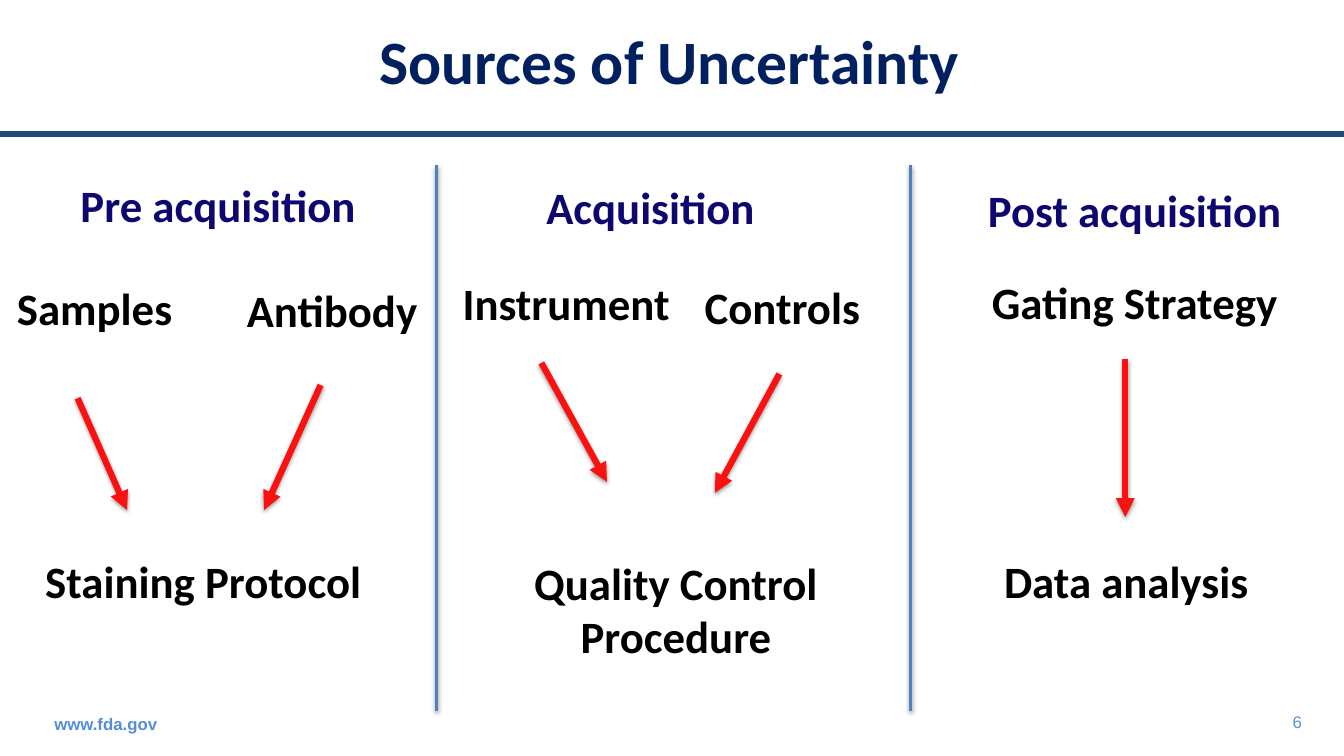
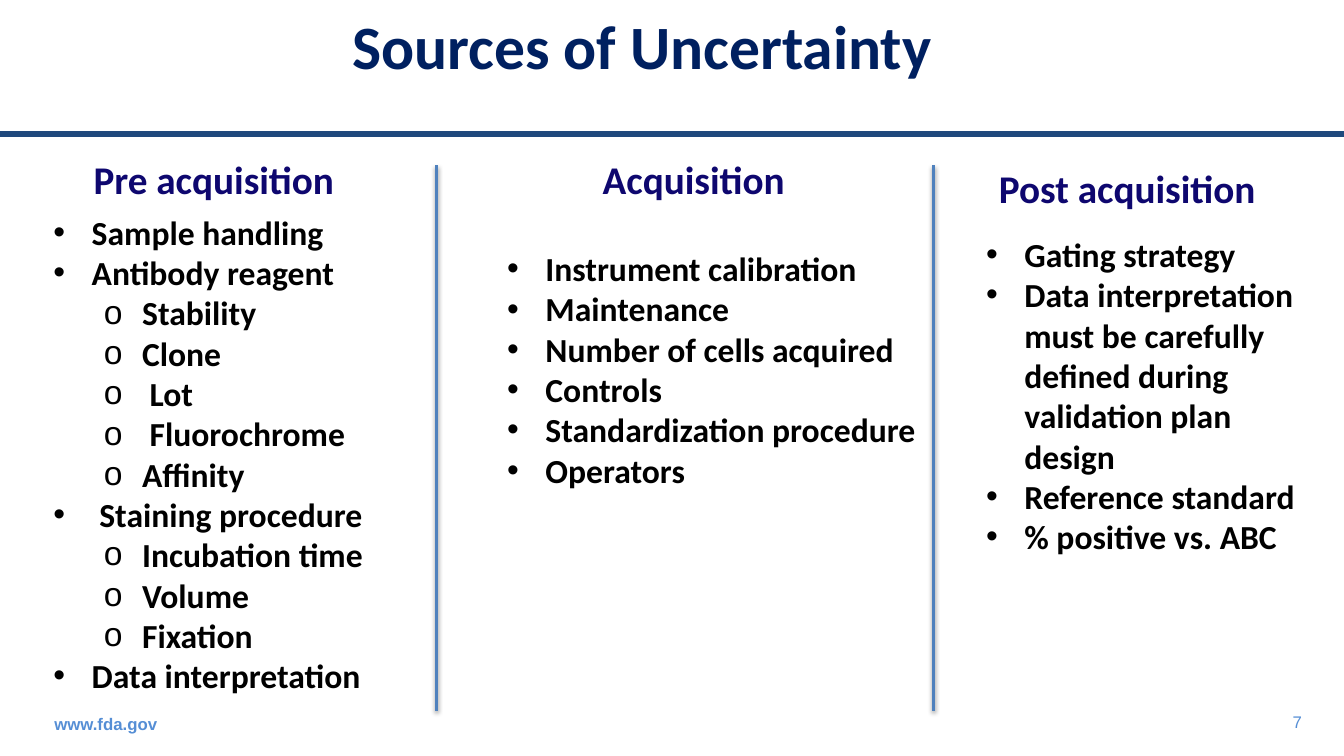
"""Two slides on the sources of uncertainty before, during and after acquisition."""
from lxml.etree import SubElement as Sub
from pptx import Presentation
from pptx.dml.color import RGBColor
from pptx.enum.shapes import MSO_CONNECTOR as Conn
from pptx.enum.text import MSO_ANCHOR as Anchor, MSO_AUTO_SIZE as Auto, PP_ALIGN as Align
from pptx.oxml.ns import qn
from pptx.util import Pt

PX = 9144
WIDTH, HEIGHT = 1333, 750
NAVY = RGBColor(0x00, 0x20, 0x60)
INDIGO = RGBColor(0x0E, 0x07, 0x6F)
BLACK = RGBColor(0x00, 0x00, 0x00)
RED = RGBColor(0xFC, 0x10, 0x10)
BAND = RGBColor(0x1F, 0x49, 0x7D)
DIVIDER = RGBColor(0x4F, 0x81, 0xBD)
FOOTER = RGBColor(0x55, 0x8E, 0xD5)

TITLE = "Sources of Uncertainty "
SITE = "www.fda.gov"
TITLE_ONLY, COMPARISON = 5, 4
DIVIDER_TOP, DIVIDER_END = 164, 705
INDENT, LEVEL_STEP = 38, 50
BULLETS = ("•", "o")

FLOW_HEADS = [
    ("Pre acquisition", 70, 171, 357),
    ("Acquisition", 532, 173, 269),
    ("Post acquisition", 970, 176, 357),
]
FLOW_STEPS = [
    ("Samples", 7, 274, 335),
    ("Antibody", 235, 276, 240),
    ("Staining Protocol", 35, 544, 338),
    ("Instrument", 449, 269, 324),
    ("Controls", 689, 273, 324),
    ("Gating Strategy", 974, 268, 354),
    ("Data analysis", 986, 544, 296),
]
QUALITY = ["Quality Control", "Procedure"]
ARROWS = [
    (77, 395, 126, 506),
    (318, 382, 262, 506),
    (537, 360, 602, 478),
    (773, 371, 709, 489),
    (1116, 356, 1116, 513),
]

LIST_HEADS = [
    ("Pre acquisition", 83, 149, 300),
    ("Acquisition", 588, 149, 226),
    ("Post acquisition", 981, 158, 300),
]
LISTS = [
    ((43, 205, 399, 500), [
        (0, "Sample handling"),
        (0, "Antibody reagent"),
        (1, "Stability"),
        (1, "Clone"),
        (1, " Lot"),
        (1, " Fluorochrome"),
        (1, "Affinity"),
        (0, " Staining procedure"),
        (1, "Incubation time"),
        (1, "Volume"),
        (1, "Fixation"),
        (0, "Data interpretation"),
    ]),
    ((493, 241, 442, 414), [
        (0, "Instrument calibration"),
        (0, "Maintenance"),
        (0, "Number of cells acquired"),
        (0, "Controls"),
        (0, "Standardization procedure"),
        (0, "Operators"),
    ]),
    ((968, 227, 339, 374), [
        (0, "Gating strategy"),
        (0, "Data interpretation must be carefully defined during validation plan design"),
        (0, "Reference standard"),
        (0, "% positive vs. ABC"),
    ]),
]


def place(sp, box):
    sp.left, sp.top, sp.width, sp.height = (v * PX for v in box)


def add_run(p, text, size, color, bold=True, font="Calibri"):
    r = p.add_run()
    r.text = text
    r.font.name, r.font.size, r.font.bold = font, Pt(size), bold
    r.font.color.rgb = color


def add_text(s, box, lines, size, color, align=Align.LEFT, anchor=Anchor.TOP, **style):
    tf = s.shapes.add_textbox(*(v * PX for v in box)).text_frame
    tf.word_wrap, tf.vertical_anchor = True, anchor
    for i, line in enumerate(lines):
        p = tf.add_paragraph() if i else tf.paragraphs[0]
        p.alignment = align
        add_run(p, line, size, color, **style)


def add_labels(s, labels, size, color):
    for text, x, y, w in labels:
        add_text(s, (x, y, w, size * 2), [text], size, color)


def add_line(s, ends, color, width, shadow=True, arrow=False):
    c = s.shapes.add_connector(Conn.STRAIGHT, *(v * PX for v in ends))
    c.line.color.rgb, c.line.width = color, Pt(width)
    if arrow:
        Sub(c.line._ln, qn("a:tailEnd"), type="triangle")
    effects = Sub(c._element.spPr, qn("a:effectLst"))
    if shadow:
        outer = Sub(effects, qn("a:outerShdw"), blurRad=str(Pt(3.1)), dist=str(Pt(1.6)),
                    dir="5400000", rotWithShape="0")
        Sub(Sub(outer, qn("a:srgbClr"), val="000000"), qn("a:alpha"), val="38000")


def add_dividers(s, *columns):
    for x in columns:
        add_line(s, (x, DIVIDER_TOP, x, DIVIDER_END), DIVIDER, 2)


def fill_list(sp, box, items):
    place(sp, box)
    tf = sp.text_frame
    tf.word_wrap, tf.auto_size, tf.vertical_anchor = True, Auto.NONE, Anchor.TOP
    for i, (level, text) in enumerate(items):
        p = tf.add_paragraph() if i else tf.paragraphs[0]
        p.level, p.alignment, p.space_before = level, Align.LEFT, Pt(0)
        pPr = p._p.get_or_add_pPr()
        pPr.set("marL", str((INDENT + level * LEVEL_STEP) * PX))
        pPr.set("indent", str(-INDENT * PX))
        Sub(pPr, qn("a:buFont"), typeface="Arial")
        Sub(pPr, qn("a:buChar"), char=BULLETS[level])
        add_run(p, text, 24, BLACK)


def add_slide(prs, layout, number, title_x, title_y):
    s = prs.slides.add_slide(prs.slide_layouts[layout])
    title = s.shapes.title
    place(title, (title_x, title_y, 1200, 125))
    tf = title.text_frame
    tf.word_wrap, tf.auto_size, tf.vertical_anchor = True, Auto.NONE, Anchor.MIDDLE
    p = tf.paragraphs[0]
    p.alignment = Align.CENTER
    add_run(p, TITLE, 44, NAVY)
    add_line(s, (0, 133, WIDTH, 133), BAND, 4.5, shadow=False)
    add_text(s, (44, 698, 422, 40), [SITE], 12, FOOTER, anchor=Anchor.MIDDLE, font="Arial")
    add_text(s, (1260, 701, 41, 30), [str(number)], 12, FOOTER, Align.RIGHT,
             bold=False, font="Arial")
    return s


def build_flow(prs):
    s = add_slide(prs, TITLE_ONLY, 6, 71, -3)
    add_labels(s, FLOW_HEADS, 32, INDIGO)
    add_labels(s, FLOW_STEPS, 32, BLACK)
    add_text(s, (507, 546, 327, 118), QUALITY, 32, BLACK, Align.CENTER)
    add_dividers(s, 433, 903)
    for ends in ARROWS:
        add_line(s, ends, RED, 4.5, arrow=True)


def build_lists(prs):
    s = add_slide(prs, COMPARISON, 7, 44, -18)
    add_labels(s, LIST_HEADS, 28, INDIGO)
    add_dividers(s, 433, 926)
    bodies = list(s.placeholders)[1:]
    for sp, (box, items) in zip(bodies, LISTS):
        fill_list(sp, box, items)
    for sp in bodies[len(LISTS):]:
        sp._element.getparent().remove(sp._element)


def main():
    prs = Presentation()
    prs.slide_width, prs.slide_height = WIDTH * PX, HEIGHT * PX
    build_flow(prs)
    build_lists(prs)
    prs.save("out.pptx")


if __name__ == "__main__":
    main()
